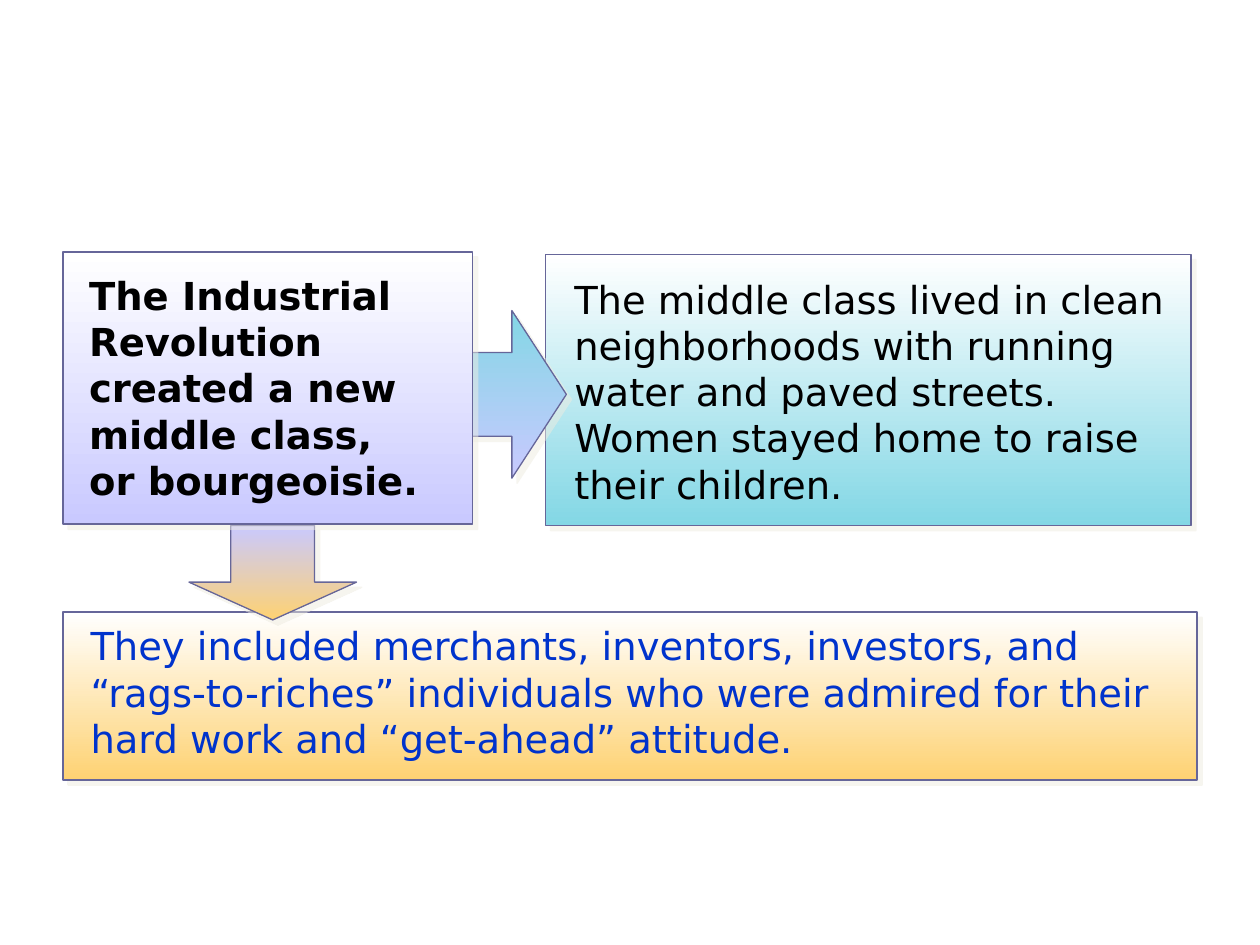
from lxml import etree
from pptx import Presentation
from pptx import util as u
from pptx.dml.color import RGBColor
from pptx.enum import shapes, text
from pptx.oxml import ns

WHITE = RGBColor(0xFF, 0xFF, 0xFF)
BLACK = RGBColor(0, 0, 0)
BLUE = RGBColor(0x00, 0x33, 0xCC)
SLATE = RGBColor(0x66, 0x66, 0x99)
LILAC = RGBColor(0xC9, 0xC9, 0xFF)
AQUA = RGBColor(0x83, 0xD7, 0xE5)
GOLD = RGBColor(0xFE, 0xD2, 0x73)
SHADE = RGBColor(0xEE, 0xEC, 0xE1)


class Board:
    """Holds the slide and the style shared by its panels, arrows and labels."""

    font = "DejaVu Sans"
    size = u.Pt(22)

    def __init__(self, slide):
        self.slide = slide

    def shape(self, kind, area, start, end, angle, width):
        item = self.slide.shapes.add_shape(kind, *map(u.Inches, area))
        item.fill.gradient()
        item.fill.gradient_angle = angle
        for stop, color in zip(item.fill.gradient_stops, (start, end)):
            stop.color.rgb = color
        item.line.color.rgb = SLATE
        item.line.width = u.Pt(width)
        self.shade(item)
        return item

    def shade(self, item):
        item.shadow.inherit = False
        effects = item._element.spPr.find(ns.qn("a:effectLst"))
        outer = etree.SubElement(effects, ns.qn("a:outerShdw"), dist=str(u.Pt(4.2)),
                                 dir="2700000", algn="ctr", rotWithShape="0")
        color = etree.SubElement(outer, ns.qn("a:srgbClr"), val=str(SHADE))
        etree.SubElement(color, ns.qn("a:alpha"), val="50000")

    def panel(self, area, color):
        self.shape(shapes.MSO_SHAPE.RECTANGLE, area, WHITE, color, 270, 1)

    def arrow(self, area, color, head, angle=270, turn=0):
        item = self.shape(shapes.MSO_SHAPE.DOWN_ARROW, area, LILAC, color, angle, 0.75)
        item.adjustments[0] = 0.5
        item.adjustments[1] = head
        item.rotation = turn

    def label(self, area, lines, color, bold=False):
        frame = self.slide.shapes.add_textbox(*map(u.Inches, area)).text_frame
        frame.word_wrap = True
        frame.auto_size = text.MSO_AUTO_SIZE.SHAPE_TO_FIT_TEXT
        para = frame.paragraphs[0]
        for place, line in enumerate(lines):
            if place:
                para.add_line_break()
            run = para.add_run()
            run.text = line
            run.font.name = self.font
            run.font.size = self.size
            run.font.bold = bold
            run.font.color.rgb = color


def main():
    deck = Presentation()
    deck.slide_width, deck.slide_height = u.Inches(10), u.Inches(7.5)
    board = Board(deck.slides.add_slide(deck.slide_layouts[6]))

    board.panel((4.33, 2.02, 5.12, 2.15), AQUA)
    board.label((4.46, 2.14, 4.94, 1.96),
                ["The middle class lived in clean neighborhoods with running water and "
                 "paved streets. Women stayed home to raise their children."], BLACK)

    board.panel((0.5, 4.86, 9, 1.33), GOLD)
    board.label((0.62, 4.89, 8.69, 1.22),
                ["They included merchants, inventors, investors, and “rags-to-riches” "
                 "individuals who were admired for their hard work and “get-ahead” "
                 "attitude."], BLUE)

    board.arrow((1.5, 4.17, 1.33, 0.75), GOLD, 0.4)
    board.arrow((3.29, 2.59, 1.33, 1.08), AQUA, 0.4, angle=0, turn=270)

    board.panel((0.5, 2, 3.25, 2.16), LILAC)
    board.label((0.61, 2.11, 3, 1.96),
                ["The Industrial Revolution created a new middle class, ",
                 "or bourgeoisie."], BLACK, bold=True)

    deck.save("out.pptx")


if __name__ == "__main__":
    main()
